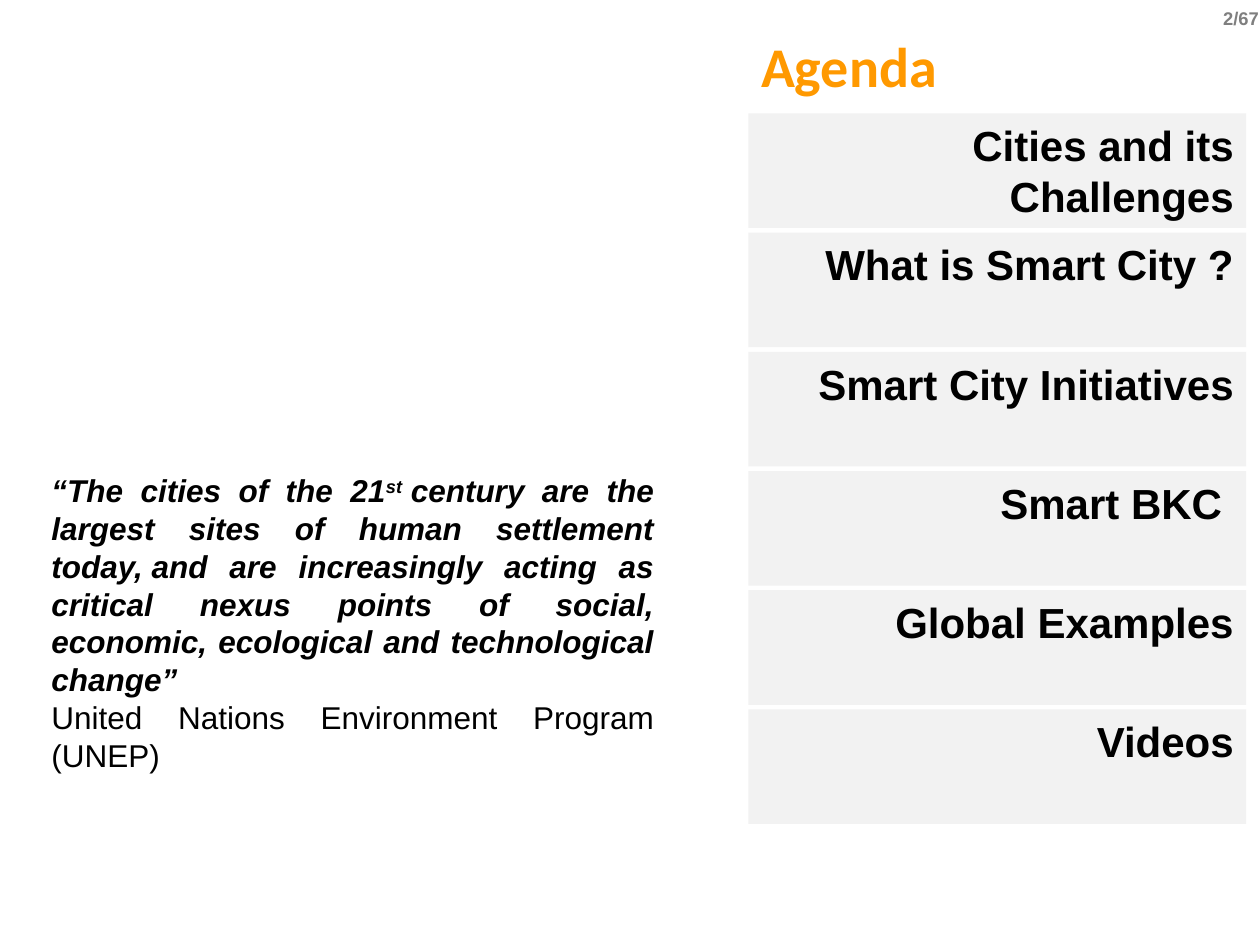
from dataclasses import dataclass

from pptx import Presentation
from pptx.dml.color import RGBColor
from pptx.enum.shapes import MSO_SHAPE
from pptx.enum.text import MSO_ANCHOR, PP_ALIGN
from pptx.util import Inches, Pt


@dataclass(frozen=True)
class Theme:
    body: str = "Arial"
    heading: str = "Calibri"
    ink: str = "000000"
    accent: str = "FF9900"
    muted: str = "7F7F7F"
    bar: str = "F2F2F2"
    title_size: float = 32
    topic_size: float = 24
    quote_size: float = 18
    page_size: float = 10.5


T = Theme()
NBSP = chr(160)  # keeps the words on both sides on one line
TOPICS = ["Cities and its Challenges", "What is Smart City ?",
          "Smart City Initiatives", "Smart BKC ", "Global Examples", "Videos"]
QUOTE = [
    ("“The cities of the 21", None),
    ("st", "30000"),
    (f"{NBSP}century are the largest sites of human settlement today,{NBSP}and "
     "are increasingly acting as critical nexus points of social, economic, "
     "ecological and technological change”", None),
]
SOURCE = "United Nations Environment Program (UNEP)"


def add_run(p, text, size, color=T.ink, name=T.body, **extra):
    r = p.add_run()
    r.text = text
    r.font.color.rgb = RGBColor.from_string(color)
    for key, value in {"size": Pt(size), "name": name, **extra}.items():
        setattr(r.font, key, value)
    return r


def add_text_box(s, box):
    tf = s.shapes.add_textbox(*map(Inches, box)).text_frame
    tf.word_wrap = True
    return tf


def add_page_number(s, box, text):
    tf = add_text_box(s, box)
    tf.margin_right = Inches(0.01)
    p = tf.paragraphs[0]
    p.alignment = PP_ALIGN.RIGHT
    add_run(p, text, T.page_size, T.muted, bold=True)


def add_title(s, box, text):
    sp = s.shapes.title
    sp.left, sp.top, sp.width, sp.height = map(Inches, box)
    tf = sp.text_frame
    tf.vertical_anchor = MSO_ANCHOR.MIDDLE
    p = tf.paragraphs[0]
    p.alignment = PP_ALIGN.LEFT
    add_run(p, text, T.title_size, T.accent, T.heading, bold=True)


def add_quote(s, box):
    tf = add_text_box(s, box)
    p = tf.paragraphs[0]
    for text, baseline in QUOTE:
        r = add_run(p, text, T.quote_size, bold=True, italic=True)
        if baseline:
            r.font._element.set("baseline", baseline)
    add_run(tf.add_paragraph(), SOURCE, T.quote_size)
    for p in tf.paragraphs:
        p.alignment = PP_ALIGN.JUSTIFY


def add_topics(s, box, topics, bar_height):
    """Spread one bar per topic evenly from the top to the bottom of the box."""
    left, top, width, height = box
    pitch = (height - bar_height) / (len(topics) - 1)
    for row, topic in enumerate(topics):
        bar = (left, top + row * pitch, width, bar_height)
        sp = s.shapes.add_shape(MSO_SHAPE.RECTANGLE, *map(Inches, bar))
        sp.shadow.inherit = False
        sp.fill.solid()
        sp.fill.fore_color.rgb = RGBColor.from_string(T.bar)
        sp.line.fill.background()
        tf = sp.text_frame
        tf.word_wrap = True
        tf.vertical_anchor = MSO_ANCHOR.TOP
        p = tf.paragraphs[0]
        p.alignment = PP_ALIGN.RIGHT
        add_run(p, topic, T.topic_size, bold=True)


def main():
    prs = Presentation()
    prs.slide_width, prs.slide_height = Inches(10), Inches(7.5)
    s = prs.slides.add_slide(prs.slide_layouts[5])
    add_page_number(s, (9.4, 0.01, 0.6, 0.28), "2/67")
    add_quote(s, (0.31, 3.69, 4.98, 2.52))
    add_title(s, (5.94, 0.09, 4.06, 0.85), "Agenda")
    add_topics(s, (5.94, 0.9, 3.95, 5.64), TOPICS, 0.91)
    prs.save("out.pptx")


if __name__ == "__main__":
    main()
